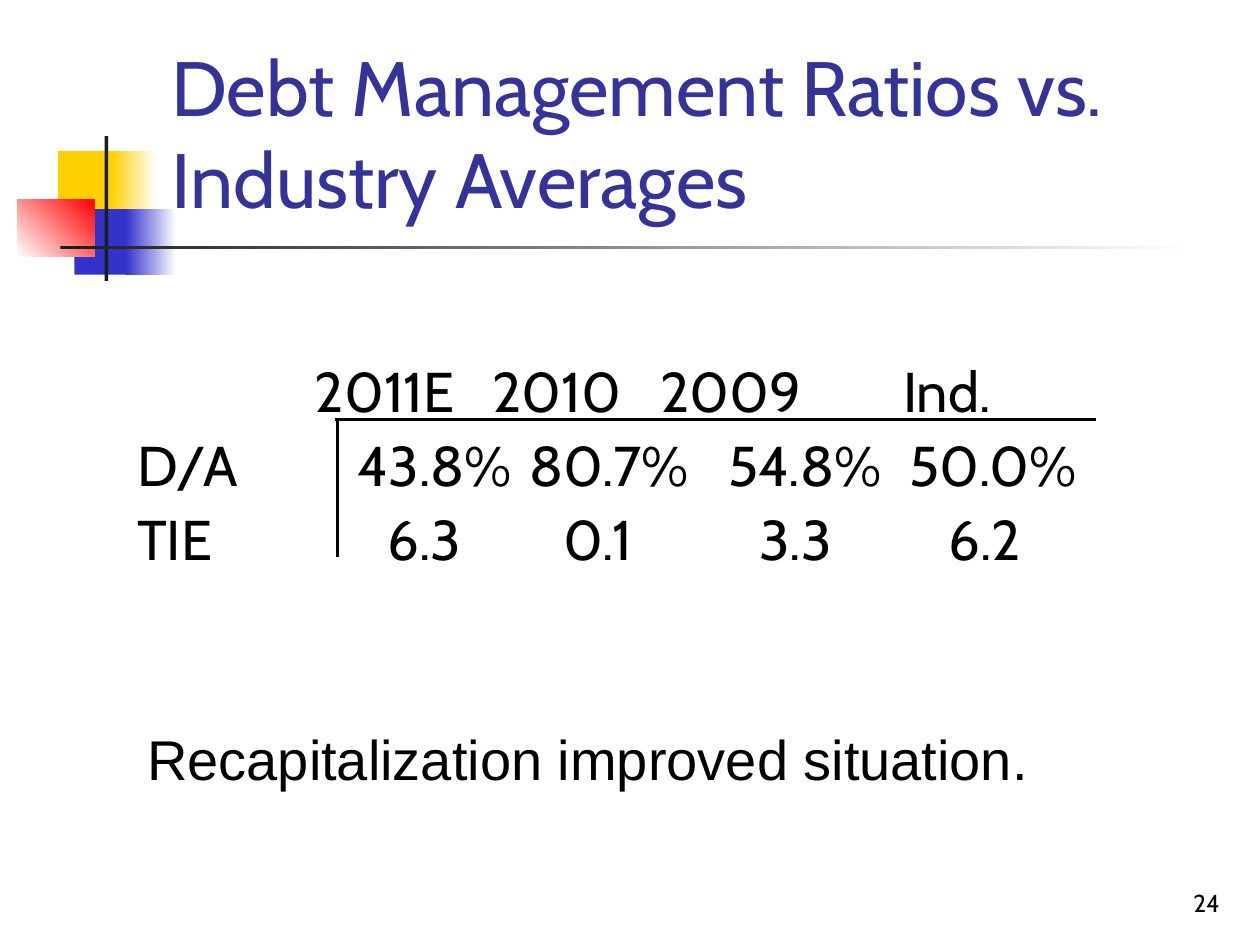
from lxml import etree
from pptx import Presentation, util as u
from pptx.dml.color import RGBColor
from pptx.enum import shapes, text
from pptx.oxml.ns import qn

GOLD = RGBColor(0xFF, 0xCF, 0x01)
BLUE = RGBColor(0x33, 0x33, 0xCC)
RED = RGBColor(0xFF, 0, 0)
DARK = RGBColor(0x1C, 0x1C, 0x1C)
NAVY = RGBColor(0x33, 0x33, 0x99)
BLACK = RGBColor(0, 0, 0)
WHITE = RGBColor(0xFF, 0xFF, 0xFF)

prs = Presentation()
prs.slide_width, prs.slide_height = u.Inches(10), u.Inches(7.5)
slide = prs.slides.add_slide(prs.slide_layouts[5])


def style(par, size, color, name="Cabin", gap=1.0):
    par.font.size, par.font.name = u.Pt(size), name
    par.font.color.rgb = color
    par.line_spacing = gap
    par.space_before = u.Pt(0)


def add_box(*area):
    frame = slide.shapes.add_textbox(*map(u.Inches, area)).text_frame
    frame.word_wrap = True
    return frame


# Corner ornament: left, top, width, height, first colour, last colour, angle
blocks = [
    (0.46, 1.2, 0.48, 0.52, GOLD, None, 0),
    (0.88, 1.2, 0.36, 0.52, GOLD, WHITE, 0),
    (0.59, 1.66, 0.46, 0.52, BLUE, None, 0),
    (1, 1.66, 0.4, 0.52, BLUE, WHITE, 0),
    (0.14, 1.58, 0.61, 0.46, WHITE, RED, 45),
    (0.83, 1.08, 0.03, 1.15, DARK, None, 0),
    (0.48, 1.95, 9, 0.03, DARK, WHITE, 0),
]
for *area, first, last, angle in blocks:
    block = slide.shapes.add_shape(shapes.MSO_SHAPE.RECTANGLE, *map(u.Inches, area))
    block.shadow.inherit = False
    block.line.fill.background()
    if last is None:
        block.fill.solid()
        block.fill.fore_color.rgb = first
    else:
        block.fill.gradient()
        block.fill.gradient_angle = angle
        for stop, color in zip(block.fill.gradient_stops, (first, last)):
            stop.color.rgb = color

# Title, moved in front of the ornament
title = slide.shapes.title
title.left, title.top, title.width, title.height = map(u.Inches, (1.26, 0.23, 8.52, 1.6))
title.text_frame.text = "Debt Management Ratios vs. Industry Averages"
title.text_frame.vertical_anchor = text.MSO_ANCHOR.BOTTOM
title.text_frame.paragraphs[0].alignment = text.PP_ALIGN.LEFT
style(title.text_frame.paragraphs[0], 44, NAVY)
slide.shapes._spTree.append(title._element)

# Ratios: headings on left tabs, values on decimal tabs
heads = ("l", (1.41, 2.82, 4.15, 6.08))
values = ("dec", (2.24, 3.7, 5.18, 6.69))
rows = [
    (heads, ("", "2011E", "2010", "2009", "Ind.")),
    (values, ("D/A", "43.8%", "80.7%", "54.8%", "50.0%")),
    (values, ("TIE", "6.3", "0.1", "3.3", "6.2")),
]
frame = add_box(0.99, 2.73, 8.14, 2.44)
for i, ((kind, stops), cells) in enumerate(rows):
    par = frame.add_paragraph() if i else frame.paragraphs[0]
    par.add_run().text = "\t".join(cells)
    style(par, 32, BLACK, gap=1.1)
    tabs = etree.SubElement(par._p.get_or_add_pPr(), qn("a:tabLst"))
    for stop in stops:
        etree.SubElement(tabs, qn("a:tab"), pos=str(u.Inches(stop)), algn=kind)
    # Tab stops come before the default run properties
    tabs.getparent().find(qn("a:defRPr")).addprevious(tabs)

# Rules under the headings and beside the labels
for ends in ((2.66, 3.33, 8.7, 3.33), (2.68, 3.34, 2.68, 4.42)):
    rule = slide.shapes.add_connector(shapes.MSO_CONNECTOR.STRAIGHT, *map(u.Inches, ends))
    rule.line.color.rgb, rule.line.width = BLACK, u.Pt(2)
    etree.SubElement(rule._element.spPr, qn("a:effectLst"))

# Remark
note = add_box(1.07, 5.76, 8.17, 0.58)
note.text = "Recapitalization improved situation."
style(note.paragraphs[0], 32, BLACK, "Arial", 0.9)

# Page number
page = add_box(7.7, 6.83, 2.08, 0.5)
page.text = "24"
page.vertical_anchor = text.MSO_ANCHOR.BOTTOM
page.paragraphs[0].alignment = text.PP_ALIGN.RIGHT
style(page.paragraphs[0], 14, BLACK)

prs.save("out.pptx")
